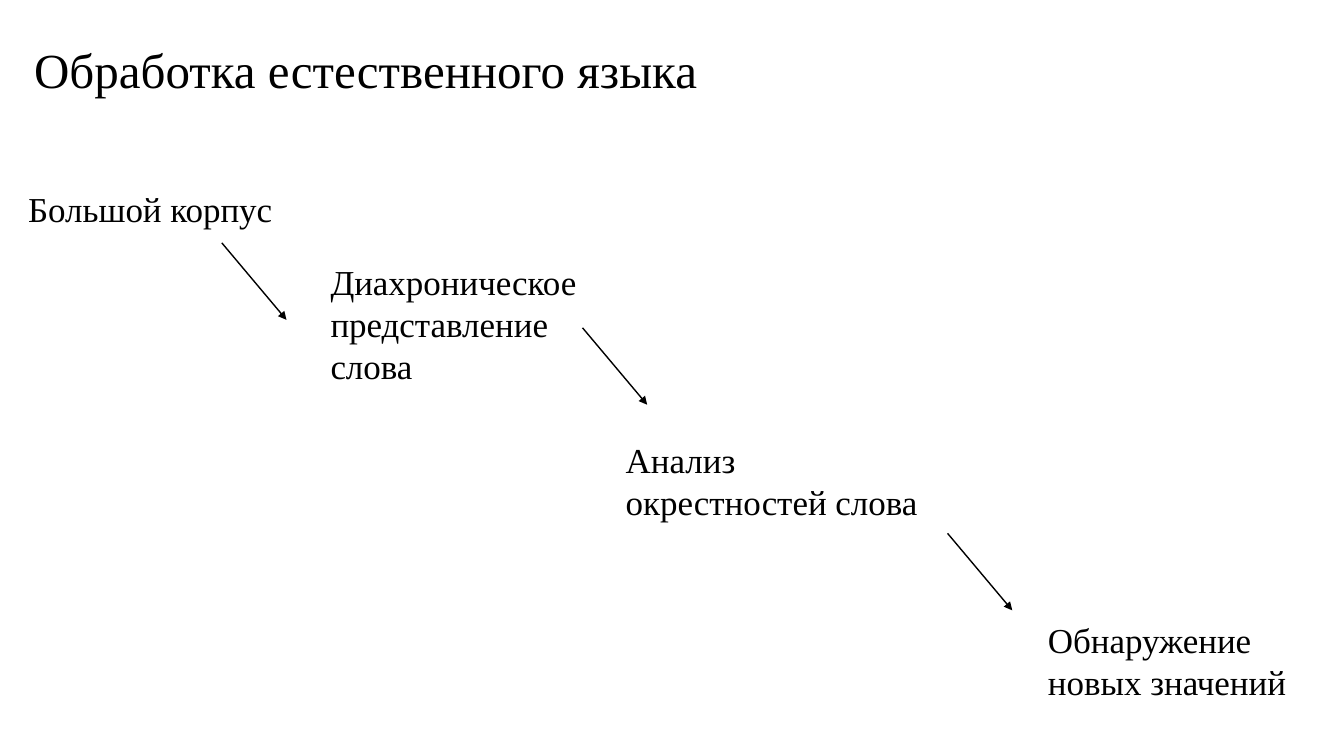
from lxml import etree
from pptx import Presentation
from pptx.dml.color import RGBColor
from pptx.enum.shapes import MSO_CONNECTOR, MSO_SHAPE
from pptx.enum.text import MSO_ANCHOR, MSO_AUTO_SIZE, PP_ALIGN
from pptx.oxml.ns import qn
from pptx.util import Cm, Pt

RECT = MSO_SHAPE.RECTANGLE
LINE = MSO_CONNECTOR.STRAIGHT
TOP, MIDDLE = MSO_ANCHOR.TOP, MSO_ANCHOR.MIDDLE
GROW = MSO_AUTO_SIZE.SHAPE_TO_FIT_TEXT
LEFT = PP_ALIGN.LEFT

COLORS = {"ink": "000000", "paper": "FFFFFF"}
FONT = "Times New Roman"
STEP_WIDTH = 8.2
RUN, DROP = 1.63, 1.94

STEPS = [
    ("Большой корпус", 0.46, 4.6, 1.32),
    ("Диахроническое представление слова", 8.08, 6.43, 3.45),
    ("Анализ окрестностей слова", 15.52, 10.92, 2.39),
    ("Обнаружение новых значений", 26.16, 15.47, 2.39),
]
ARROWS = [(5.59, 6.12), (14.68, 8.26), (23.88, 13.44)]


def color(name):
    return RGBColor.from_string(COLORS[name])


def write(frame, text, size=25, anchor=TOP, spacing=None):
    frame.word_wrap = True
    frame.vertical_anchor = anchor
    para = frame.paragraphs[0]
    para.alignment = LEFT
    para.line_spacing = spacing
    run = para.add_run()
    run.text = text
    run.font.name = FONT
    run.font.size = Pt(size)
    run.font.color.rgb = color("ink")


class Board:
    def __init__(self, slide):
        self.slide = slide
        self.shapes = slide.shapes
        fill = slide.background.fill
        fill.solid()
        fill.fore_color.rgb = color("paper")

    def title(self, text, left, top, width, height):
        box = self.shapes.add_textbox(Cm(left), Cm(top), Cm(width), Cm(height))
        write(box.text_frame, text, size=35, anchor=MIDDLE, spacing=0.9)

    def step(self, text, left, top, height):
        box = self.shapes.add_shape(RECT, Cm(left), Cm(top), Cm(STEP_WIDTH), Cm(height))
        box.shadow.inherit = False
        box.fill.solid()
        box.fill.fore_color.rgb = color("paper")
        box.line.fill.background()
        write(box.text_frame, text)
        box.text_frame.auto_size = GROW

    def arrow(self, left, top):
        link = self.shapes.add_connector(
            LINE, Cm(left), Cm(top), Cm(left + RUN), Cm(top + DROP))
        link.line.color.rgb = color("ink")
        link.line.width = Pt(1)
        props = link.line._get_or_add_ln()
        etree.SubElement(props, qn("a:tailEnd"), type="triangle")
        etree.SubElement(link._element.spPr, qn("a:effectLst"))


def main():
    deck = Presentation()
    deck.slide_width, deck.slide_height = Cm(33.87), Cm(19.05)
    board = Board(deck.slides.add_slide(deck.slide_layouts[6]))
    board.title("Обработка естественного языка", 0.61, 0, 29.21, 3.68)
    for step in STEPS:
        board.step(*step)
    for start in ARROWS:
        board.arrow(*start)
    deck.save("out.pptx")


if __name__ == "__main__":
    main()
